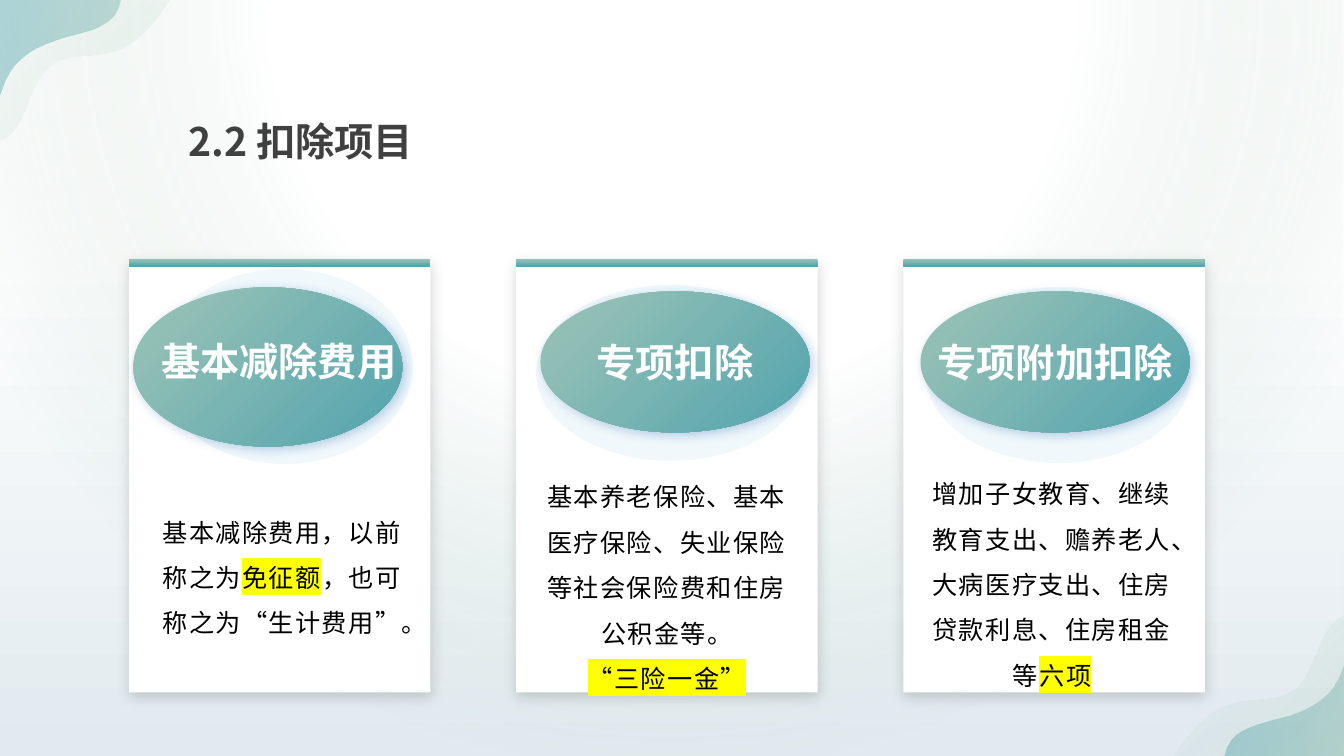
import pptx
import pptx.util
import pptx.dml.color
import pptx.enum.shapes
import pptx.enum.text
import pptx.oxml
import pptx.oxml.ns

PX = 9144
HUES = {"white": "FFFFFF", "ink": "000000", "grey": "404040", "mark": "FFFF00",
        "mist": "E1EAEF", "haze": "D2E3DC", "sage": "92BFB5", "leaf": "B6D3B7",
        "teal": "52A4AE", "halo": "0090D5", "navy": "0B54A2"}
JP, SC = "Noto Sans CJK JP", "Noto Sans CJK SC"
TEAL = [(16, "sage", 100), (100, "teal", 100)]
NS = 'xmlns:a="http://schemas.openxmlformats.org/drawingml/2006/main"'
SHAPE = pptx.enum.shapes.MSO_SHAPE
ANCHOR = pptx.enum.text.MSO_ANCHOR


def tint(hue, alpha=100):
    return f'<a:srgbClr val="{HUES[hue]}"><a:alpha val="{alpha * 1000}"/></a:srgbClr>'


def node(xml):
    head, tail = xml.split(">", 1)
    slash = "/" if head.endswith("/") else ""
    return pptx.oxml.parse_xml(f"{head.rstrip('/')} {NS}{slash}>{tail}")


def curve(start, bends, steps=16):
    points = []
    for a, b, end in bends:
        for n in range(1, steps + 1):
            t = n / steps
            u = 1 - t
            points.append(tuple(u**3 * p + 3 * u * u * t * q + 3 * u * t * t * r + t**3 * s
                                for p, q, r, s in zip(start, a, b, end)))
        start = end
    return points


class Deck:
    """Draws styled elements on one slide."""

    def __init__(self):
        self.show = pptx.Presentation()
        self.show.slide_width = 1333 * PX
        self.show.slide_height = 750 * PX
        self.slide = self.show.slides.add_slide(self.show.slide_layouts[6])

    def color(self, hue):
        return pptx.dml.color.RGBColor.from_string(HUES[hue])

    def paint(self, shape, fill, turn="", line=None, shade=None):
        shape.shadow.inherit = False
        shape.fill.solid()
        if line:
            shape.line.color.rgb = self.color(line)
            shape.line.width = pptx.util.Pt(1)
        else:
            shape.line.fill.background()
        if isinstance(fill, list):
            stops = "".join(f'<a:gs pos="{at * 1000}">{tint(hue, alpha)}</a:gs>'
                            for at, hue, alpha in fill)
            xml = f'<a:gradFill rotWithShape="1"><a:gsLst>{stops}</a:gsLst>{turn}</a:gradFill>'
        else:
            xml = f"<a:solidFill>{tint(*fill)}</a:solidFill>"
        props = shape._element.spPr
        old = props.find(pptx.oxml.ns.qn("a:solidFill"))
        props.replace(old, node(xml))
        if shade:
            hue, alpha, blur, dist, angle = shade
            props.find(pptx.oxml.ns.qn("a:effectLst")).append(node(
                f'<a:outerShdw blurRad="{blur * 12700}" dist="{dist * 12700}" '
                f'dir="{angle * 60000}" algn="ctr" rotWithShape="0">'
                f"{tint(hue, alpha)}</a:outerShdw>"))
        return shape

    def linear(self, angle):
        return f'<a:lin ang="{angle * 60000}" scaled="0"/>'

    def shape(self, kind, box, fill, **style):
        item = self.slide.shapes.add_shape(kind, *(n * PX for n in box))
        return self.paint(item, fill, **style)

    def wave(self, points, fill, angle):
        pen = self.slide.shapes.build_freeform(
            round(points[0][0] * PX), round(points[0][1] * PX))
        pen.add_line_segments([(round(x * PX), round(y * PX)) for x, y in points[1:]])
        return self.paint(pen.convert_to_shape(), fill, self.linear(angle))

    def box(self, place):
        return self.slide.shapes.add_textbox(*(n * PX for n in place))

    def text(self, item, paras, size=28, face=SC, hue="white", bold=False,
             lead=None, track=0, wrap=True, anchor=ANCHOR.TOP):
        frame = item.text_frame
        frame.word_wrap = wrap
        frame.vertical_anchor = anchor
        for i, parts in enumerate(paras):
            para = frame.add_paragraph() if i else frame.paragraphs[0]
            para.alignment = pptx.enum.text.PP_ALIGN.CENTER
            para.line_spacing = lead
            for words, marked in parts:
                run = para.add_run()
                run.text = words
                font = run.font
                font.size = pptx.util.Pt(size)
                font.bold = bold
                font.color.rgb = self.color(hue)
                font.name = face
                props = run._r.get_or_add_rPr()
                latin = props.find(pptx.oxml.ns.qn("a:latin"))
                latin.addnext(node(f'<a:ea typeface="{face}"/>'))
                if track:
                    props.set("spc", str(track * 100))
                if marked:
                    latin.addprevious(node(f"<a:highlight>{tint('mark')}</a:highlight>"))

    def card(self, left, halo, oval, body, paras, name, label=None):
        self.shape(SHAPE.RECTANGLE, (left, 257, 299, 430), ("white",),
                   shade=("ink", 16, 10, 3, 90))
        self.text(self.box(body), paras, size=18, hue="ink", lead=1.5, track=1)
        self.shape(SHAPE.RECTANGLE, (left, 257, 299, 7), TEAL, turn=self.linear(90))
        self.shape(SHAPE.OVAL, halo, ("halo", 6), line="white")
        disc = self.shape(SHAPE.OVAL, oval, TEAL, turn=self.linear(45),
                          shade=("navy", 25, 8, 3, 45))
        self.text(self.box(label) if label else disc, [[(name, False)]], bold=True,
                  wrap=False, anchor=ANCHOR.TOP if label else ANCHOR.MIDDLE)


CARDS = [
    dict(halo=(155, 266, 255, 195), oval=(132, 285, 267, 158), body=(142, 493, 276, 164),
         name="基本减除费用", label=(150, 330, 253, 57),
         paras=[[("基本减除费用，以前称之为", False), ("免征额", True),
                 ("，也可称之为“生计费用”。", False)]]),
    dict(halo=(531, 282, 269, 176), oval=(536, 289, 267, 140), body=(523, 458, 277, 229),
         name="专项扣除",
         paras=[[("基本养老保险、基本医疗保险、失业保险等社会保险费和住房公积金等。", False)],
                [("“三险一金”", True)]]),
    dict(halo=(918, 284, 264, 176), oval=(913, 289, 267, 140), body=(905, 455, 277, 237),
         name="专项附加扣除",
         paras=[[("增加子女教育、继续教育支出、赡养老人、大病医疗支出、住房贷款利息、住房租金等", False),
                 ("六项", True)]]),
]
OUTER = [(0, 0), (168, 0)] + curve((168, 0), [((123, 71), (93, 48), (59, 60)),
                                              ((26, 72), (30, 128), (0, 139))])
INNER = [(0, 0), (119, 0)] + curve((119, 0), [((112, 52), (20, 17), (0, 94))])
WAVES = [(OUTER, [(0, "sage", 0), (92, "leaf", 22)], 45),
         (INNER, [(0, "sage", 52), (100, "teal", 43)], 190)]


def main():
    deck = Deck()
    full = (0, 0, 1333, 750)
    deck.shape(SHAPE.RECTANGLE, full, [(0, "mist", 100), (67, "white", 100)],
               turn=deck.linear(270))
    deck.shape(SHAPE.RECTANGLE, full,
               [(0, "white", 100), (52, "white", 100), (100, "haze", 0)],
               turn='<a:path path="circle"><a:fillToRect l="50000" t="-80000" '
                    'r="50000" b="180000"/></a:path>')
    for points, fill, angle in WAVES:
        deck.wave(points, fill, angle)
        deck.wave([(1333 - x, 750 - y) for x, y in points], fill, angle)
    deck.text(deck.box((141, 102, 314, 66)), [[("2.2 扣除项目", False)]],
              face=JP, hue="grey", bold=True, lead=1.2)
    for i in (1, 0, 2):
        deck.card(128 + 384 * i, **CARDS[i])
    deck.show.save("out.pptx")


if __name__ == "__main__":
    main()
